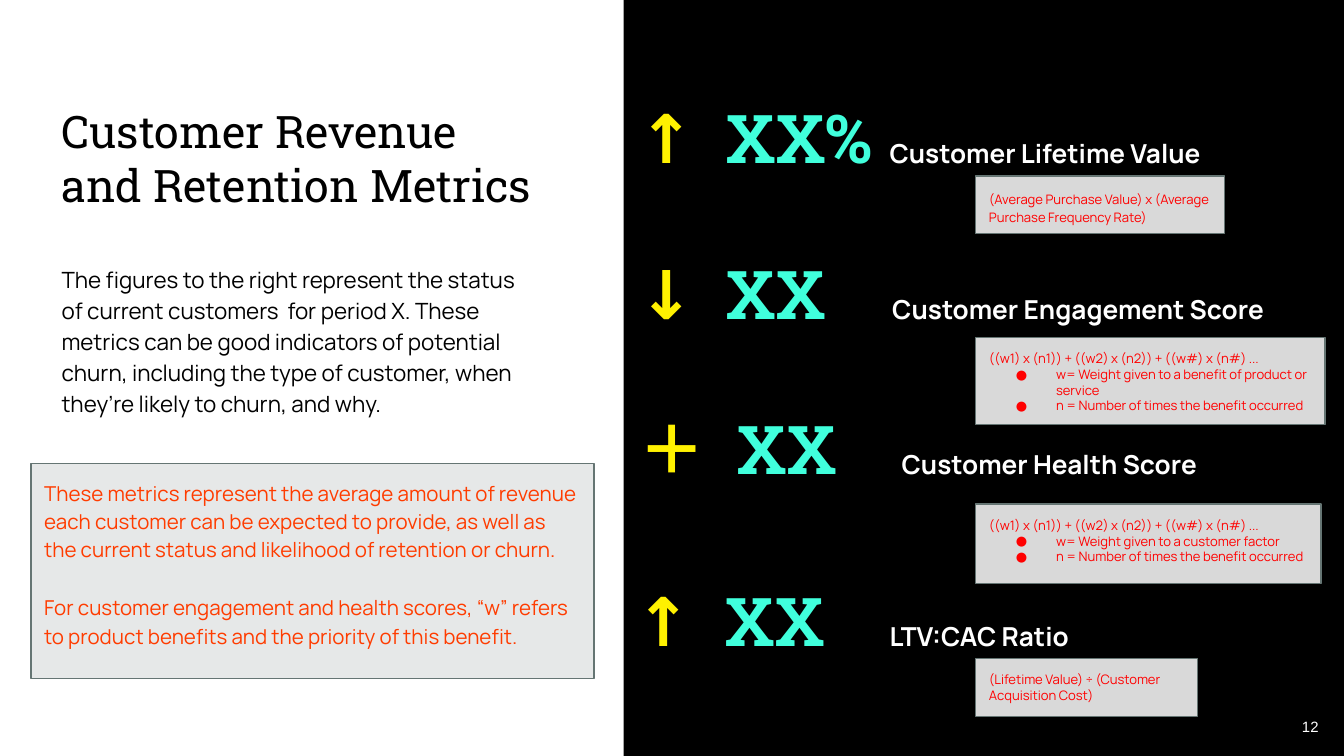
import lxml.etree
import pptx
import pptx.dml.color
import pptx.enum.shapes
import pptx.enum.text
import pptx.oxml.ns
import pptx.util

Inches = pptx.util.Inches
Pt = pptx.util.Pt
RGBColor = pptx.dml.color.RGBColor
Anchor = pptx.enum.text.MSO_ANCHOR
Align = pptx.enum.text.PP_ALIGN
qn = pptx.oxml.ns.qn

BLACK = RGBColor(0x00, 0x00, 0x00)
WHITE = RGBColor(0xFF, 0xFF, 0xFF)
YELLOW = RGBColor(0xFF, 0xF1, 0x00)
TURQUOISE = RGBColor(0x40, 0xFF, 0xDC)
RED = RGBColor(0xFF, 0x00, 0x00)
ORANGE = RGBColor(0xFF, 0x3C, 0x00)
LIGHT_GRAY = RGBColor(0xD9, 0xD9, 0xD9)
SLATE = RGBColor(0x65, 0x75, 0x73)


class MetricsSlide:
    """Hold the style and the current slide, and draw each kind of element."""

    heading_font = "Roboto Slab"
    body_font = "Manrope"

    def __init__(self, slide):
        self.slide = slide

    def frame(self, shape, anchor=Anchor.TOP):
        text_frame = shape.text_frame
        text_frame.word_wrap = True
        text_frame.vertical_anchor = anchor
        text_frame.margin_left = text_frame.margin_right = Inches(0.1)
        text_frame.margin_top = text_frame.margin_bottom = Inches(0.1)
        return text_frame

    def run(self, paragraph, text, size, color, font, bold=False):
        run = paragraph.add_run()
        run.text = text
        run.font.size = Pt(size)
        run.font.name = font
        run.font.bold = bold
        run.font.color.rgb = color

    def text(self, box, text, size, color=BLACK, font=body_font,
             align=Align.LEFT, anchor=Anchor.TOP, line_spacing=1.0):
        shape = self.slide.shapes.add_textbox(*map(Inches, box))
        paragraph = self.frame(shape, anchor).paragraphs[0]
        paragraph.alignment = align
        paragraph.line_spacing = line_spacing
        self.run(paragraph, text, size, color, font)

    def panel(self, box, fill, line=None, opacity=None):
        rectangle = pptx.enum.shapes.MSO_SHAPE.RECTANGLE
        shape = self.slide.shapes.add_shape(rectangle, *map(Inches, box))
        shape.shadow.inherit = False
        shape.fill.solid()
        shape.fill.fore_color.rgb = fill
        if opacity is not None:
            color = shape._element.spPr.find(qn("a:solidFill"))[0]
            lxml.etree.SubElement(color, qn("a:alpha"), val=str(opacity * 1000))
        if line is None:
            shape.line.fill.background()
        else:
            shape.line.color.rgb = line
            shape.line.width = Pt(0.75)
        return shape

    def bullet(self, paragraph, color, size):
        properties = paragraph._p.get_or_add_pPr()
        properties.set("marL", str(Inches(0.5)))
        properties.set("indent", str(Inches(-0.3)))
        bullet_color = lxml.etree.SubElement(properties, qn("a:buClr"))
        lxml.etree.SubElement(bullet_color, qn("a:srgbClr"), val=str(color))
        lxml.etree.SubElement(properties, qn("a:buSzPts"), val=str(size * 100))
        lxml.etree.SubElement(properties, qn("a:buFont"), typeface=self.body_font)
        lxml.etree.SubElement(properties, qn("a:buChar"), char="●")

    def note(self, box, paragraphs, size=7, color=RED, fill=LIGHT_GRAY,
             opacity=None, line_spacing=1.0, gap=0, bulleted=False):
        text_frame = self.frame(self.panel(box, fill, SLATE, opacity))
        for index, text in enumerate(paragraphs):
            paragraph = text_frame.paragraphs[0] if index == 0 else text_frame.add_paragraph()
            paragraph.alignment = Align.LEFT
            paragraph.line_spacing = line_spacing
            if index:
                paragraph.space_before = Pt(gap)
                if bulleted:
                    self.bullet(paragraph, color, size)
            self.run(paragraph, text, size, color, self.body_font)

    def metric(self, box, sign, value, label, tabs):
        shape = self.slide.shapes.add_textbox(*map(Inches, box))
        paragraph = self.frame(shape).paragraphs[0]
        tab_list = lxml.etree.SubElement(paragraph._p.get_or_add_pPr(), qn("a:tabLst"))
        for position in tabs:
            lxml.etree.SubElement(tab_list, qn("a:tab"), pos=str(Inches(position)), algn="l")
        self.run(paragraph, sign + "\t", 36, YELLOW, self.heading_font, True)
        self.run(paragraph, value + "\t", 36, TURQUOISE, self.heading_font, True)
        self.run(paragraph, label, 14, WHITE, self.body_font, True)


def main():
    presentation = pptx.Presentation()
    presentation.slide_width = Inches(10)
    presentation.slide_height = presentation.slide_width * 9 // 16
    page = MetricsSlide(presentation.slides.add_slide(presentation.slide_layouts[6]))

    page.panel((4.64, 0, 5.36, presentation.slide_height.inches), BLACK)
    page.text((0.36, 0.67, 3.76, 1), "Customer Revenue and Retention Metrics", 24,
              font=page.heading_font)
    page.text((0.36, 1.85, 3.76, 1.6),
              "The figures to the right represent the status of current customers  for period X. "
              "These metrics can be good indicators of potential churn, including the type of "
              "customer, when they’re likely to churn, and why.", 12, line_spacing=1.15)
    page.text((9.31, 5.19, 0.6, 0.43), "12", 8, WHITE, "Arial", Align.RIGHT, Anchor.MIDDLE)

    for left, top, width, sign, value, label, tabs in (
        (4.65, 0.62, 4.98, "↑", "XX%", "Customer Lifetime Value", (0.66, 1.87)),
        (4.65, 1.78, 4.98, "↓", "XX", "Customer Engagement Score", (0.66, 1.89)),
        (4.65, 2.93, 5.21, "＋", "XX", "Customer Health Score", (0.74, 1.96)),
        (4.63, 4.21, 3.98, "↑", "XX", "LTV:CAC Ratio", (0.67, 1.89)),
    ):
        page.metric((left, top, width, 0.69), sign, value, label, tabs)

    score = "((w1) x (n1)) + ((w2) x (n2)) + ((w#) x (n#) ..."
    count = "n = Number of times the benefit occurred"
    page.note((7.26, 1.31, 1.85, 0.43),
              ["(Average Purchase Value) x (Average Purchase Frequency Rate)"], line_spacing=1.15)
    page.note((7.26, 2.51, 2.6, 0.65),
              [score, "w= Weight given to a benefit of product or service", count], bulleted=True)
    page.note((7.26, 3.75, 2.57, 0.59),
              [score, "w= Weight given to a customer factor", count], bulleted=True)
    page.note((7.26, 4.9, 1.65, 0.43), ["(Lifetime Value) ÷ (Customer Acquisition Cost)"])
    page.note((0.23, 3.45, 4.19, 1.6),
              ["These metrics represent the average amount of revenue each customer can be "
               "expected to provide, as well as the current status and likelihood of retention "
               "or churn.",
               "For customer engagement and health scores, “w” refers to product benefits and "
               "the priority of this benefit."],
              size=11, color=ORANGE, fill=SLATE, opacity=16, line_spacing=1.15, gap=16)

    presentation.save("out.pptx")


if __name__ == "__main__":
    main()
